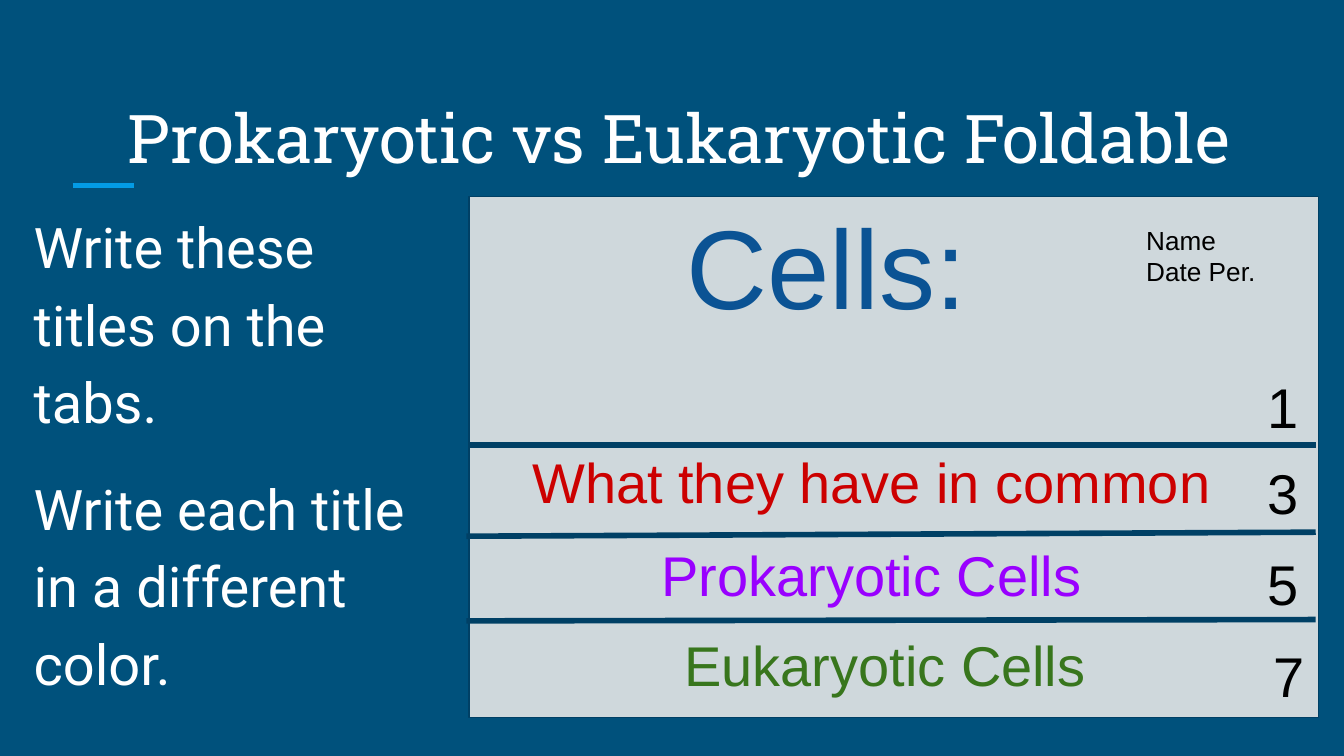
from lxml import etree
from pptx import Presentation
from pptx.dml.color import RGBColor
from pptx.enum.shapes import MSO_CONNECTOR, MSO_SHAPE
from pptx.enum.text import MSO_ANCHOR, MSO_AUTO_SIZE, PP_ALIGN
from pptx.oxml.ns import qn
from pptx.util import Inches, Pt

COLORS = {
    "background": "00517C", "accent": "039BE5", "white": "FFFFFF",
    "paper": "CFD8DC", "fold": "004065", "black": "000000",
    "blue": "0B5394", "red": "CC0000", "purple": "9900FF", "green": "38761D",
}

TITLE = "Prokaryotic vs Eukaryotic Foldable"
STEPS = ["Write these titles on the tabs.", "Write each title in a different color."]
PAPER = (3.49, 1.46, 6.32, 3.88)
ACCENT = (0.54, 1.38, 1, 1.38)
FOLDS = [(3.49, 3.31, 9.79, 3.31), (3.47, 3.99, 9.79, 3.96), (3.47, 4.62, 9.79, 4.61)]

# text, left, top, color
TABS = [
    ("What they have in common", 3.58, 3.23, "red"),
    ("Prokaryotic Cells", 3.58, 3.92, "purple"),
    ("Eukaryotic Cells", 3.68, 4.59, "green"),
]
# page number, left, top
PAGES = [("1", 9.33, 2.67), ("3", 9.33, 3.31), ("5", 9.33, 3.99), ("7", 9.38, 4.67)]


def rgb(name):
    return RGBColor.from_string(COLORS[name])


def write(sp, lines, size, color, font="Arial", align=PP_ALIGN.LEFT,
          anchor=MSO_ANCHOR.TOP, **spacing):
    """Fill a shape's text frame, one paragraph per line."""
    tf = sp.text_frame
    frame = {"word_wrap": True, "auto_size": MSO_AUTO_SIZE.NONE, "vertical_anchor": anchor}
    frame.update({f"margin_{side}": Inches(0.1) for side in ("left", "right", "top", "bottom")})
    for name, value in frame.items():
        setattr(tf, name, value)
    for i, line in enumerate(lines):
        p = tf.paragraphs[0] if i == 0 else tf.add_paragraph()
        for name, value in {"alignment": align, "space_before": Pt(0), **spacing}.items():
            setattr(p, name, value)
        r = p.add_run()
        r.text = line
        for name, value in {"size": Pt(size), "name": font}.items():
            setattr(r.font, name, value)
        r.font.color.rgb = rgb(color)


def place(sp, *box):
    for name, value in zip(("left", "top", "width", "height"), box):
        setattr(sp, name, Inches(value))


def add_text(slide, box, *args, **kwargs):
    write(slide.shapes.add_textbox(*map(Inches, box)), *args, **kwargs)


def add_line(slide, ends, color):
    line = slide.shapes.add_connector(MSO_CONNECTOR.STRAIGHT, *map(Inches, ends))
    line.line.color.rgb = rgb(color)
    line.line.width = Pt(3)
    etree.SubElement(line._element.spPr, qn("a:effectLst"))


def remove_bullets(sp):
    for p in sp.text_frame.paragraphs:
        pPr = p._p.get_or_add_pPr()
        pPr.set("marL", "0")
        pPr.set("indent", "0")
        etree.SubElement(pPr, qn("a:buNone"))


def main():
    prs = Presentation()
    prs.slide_width = Inches(10)
    prs.slide_height = prs.slide_width * 9 // 16
    slide = prs.slides.add_slide(prs.slide_layouts[1])
    slide.background.fill.solid()
    slide.background.fill.fore_color.rgb = rgb("background")

    title, body = slide.placeholders
    place(title, 0.48, 0.1, 9.15, 1.32)
    write(title, [TITLE], 36, "white", "Roboto Slab", PP_ALIGN.CENTER, MSO_ANCHOR.BOTTOM)
    place(body, 0.15, 1.41, 3.04, 3.37)
    write(body, STEPS, 30, "white", "Roboto", line_spacing=1.15, space_after=Pt(16))
    remove_bullets(body)
    add_line(slide, ACCENT, "accent")

    paper = slide.shapes.add_shape(MSO_SHAPE.RECTANGLE, *map(Inches, PAPER))
    paper.shadow.inherit = False
    paper.fill.solid()
    paper.fill.fore_color.rgb = rgb("paper")
    paper.line.color.rgb = rgb("fold")
    paper.line.width = Pt(0.75)

    for ends in FOLDS:
        add_line(slide, ends, "fold")
    for number, left, top in PAGES:
        add_text(slide, (left, top, 0.36, 0.59), [number], 30, "black")
    add_text(slide, (5.01, 1.37, 3.25, 0.75), ["Cells:"], 60, "blue")
    for text, left, top, color in TABS:
        add_text(slide, (left, top, 5.81, 0.53), [text], 30, color, align=PP_ALIGN.CENTER)
    add_text(slide, (8.43, 1.57, 1.38, 0.95), ["Name", "Date Per."], 14, "black")

    prs.save("out.pptx")


if __name__ == "__main__":
    main()
